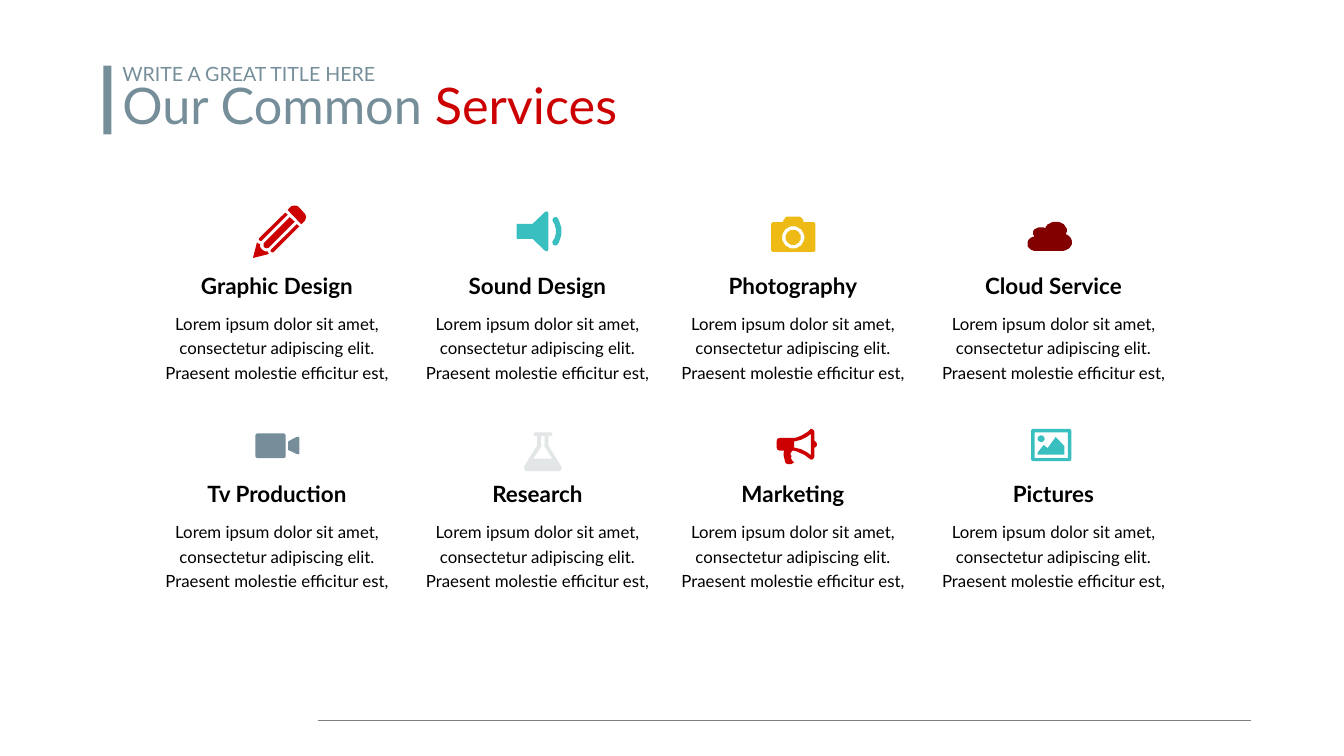
from lxml import etree
from pptx import Presentation
from pptx.dml.color import RGBColor
from pptx.enum.shapes import MSO_CONNECTOR as CONNECTOR, MSO_SHAPE as SHAPE
from pptx.enum.text import MSO_AUTO_SIZE as FIT, PP_ALIGN as ALIGN
from pptx.oxml.ns import qn
from pptx.util import Pt

BLACK = RGBColor(0x00, 0x00, 0x00)
GREY = RGBColor(0x80, 0x80, 0x80)
SLATE = RGBColor(0x75, 0x8E, 0x99)
RED = RGBColor(0xCC, 0x00, 0x00)
TEAL = RGBColor(0x3A, 0xBF, 0xC0)
YELLOW = RGBColor(0xEE, 0xBB, 0x16)
MAROON = RGBColor(0x82, 0x00, 0x00)
SILVER = RGBColor(0xE2, 0xE6, 0xE6)

FONT = "Lato"
ICON_UNIT = Pt(0.72)
CURVE_STEPS = 8


def rounded(x, y, w, h, r):
    """Outline of a rounded rectangle; a circle when r is half of w and h."""
    k = 0.45 * r
    right, bottom = x + w, y + h
    return [
        (x + r, y), (right - r, y),
        (right - k, y, right, y + k, right, y + r), (right, bottom - r),
        (right, bottom - k, right - k, bottom, right - r, bottom), (x + r, bottom),
        (x + k, bottom, x, bottom - k, x, bottom - r), (x, y + r),
        (x, y + k, x + k, y, x + r, y),
    ]


# Outlines: a pair is a corner, six numbers are a cubic curve.
PENCIL = [
    [(101, 33), (96, 38), (69, 10), (73, 5), (78, 0, 87, 0, 92, 5), (101, 15),
     (106, 20, 106, 28, 101, 33)],
    [(36, 88), (35, 89, 35, 92, 36, 93), (38, 94, 40, 94, 41, 93), (92, 42), (87, 38)],
    [(13, 65), (12, 66, 12, 69, 13, 70), (15, 71, 17, 71, 18, 70), (69, 19), (64, 15)],
    [(73, 24), (23, 74), (20, 77, 20, 81, 23, 84), (25, 86, 29, 86, 32, 84), (83, 33)],
    [(32, 97), (31, 96, 30, 94, 29, 92), (21, 92, 14, 87, 14, 79), (15, 77),
     (12, 77, 10, 76, 8, 74), (0, 105)],
]
SPEAKER = [
    [(55, 3), (57, 1, 59, 0, 61, 1), (62, 1, 63, 3, 63, 6), (63, 73),
     (63, 77, 62, 78, 61, 79), (59, 80, 57, 79, 55, 77), (32, 55), (3, 55),
     (1, 55, 0, 54, 0, 52), (0, 27), (0, 25, 1, 25, 3, 25), (32, 25)],
    [(74, 13), (76, 12, 78, 12, 79, 12), (80, 12, 81, 13, 82, 15),
     (87, 23, 89, 31, 89, 40), (89, 49, 87, 57, 82, 65), (81, 67, 79, 68, 77, 68),
     (73, 68, 70, 64, 72, 60), (76, 53, 78, 47, 78, 40), (78, 33, 76, 26, 72, 20),
     (71, 18, 71, 14, 74, 13)],
]
CAMERA = [
    [(83, 11), (87, 11, 88, 13, 88, 16), (88, 65), (88, 69, 86, 70, 83, 70), (6, 70),
     (2, 70, 0, 69, 0, 65), (0, 16), (0, 13, 2, 11, 6, 11), (23, 11), (26, 5),
     (28, 2, 30, 0, 34, 0), (55, 0), (58, 0, 61, 2, 63, 5), (65, 11)],
    rounded(22, 19, 44, 44, 22),
    rounded(29, 26, 30, 30, 15),
]
CLOUD = [
    [(76, 25), (83, 27, 88, 33, 88, 41), (88, 51, 78, 58, 66, 58), (18, 58),
     (8, 58, 0, 52, 0, 44), (0, 36, 6, 30, 14, 29), (12, 27, 11, 25, 11, 22),
     (11, 15, 18, 11, 26, 11), (29, 11, 32, 11, 35, 13), (38, 5, 46, 0, 56, 0),
     (68, 0, 78, 8, 78, 17), (78, 20, 77, 23, 76, 25)],
]
VIDEO = [
    rounded(0, 0, 60, 49, 5),
    [(82, 7), (72, 12), (65, 16), (65, 33), (72, 36), (82, 41),
     (85, 42, 87, 41, 87, 39), (87, 10), (87, 7, 85, 6, 82, 7)],
]
FLASK = [
    [(73, 66), (77, 70, 73, 77, 68, 77), (7, 77), (1, 77, -1, 70, 1, 66), (26, 26),
     (26, 7), (22, 7), (18, 7, 18, 0, 22, 0), (52, 0), (57, 0, 57, 7, 52, 7),
     (48, 7), (48, 26)],
    [(18, 52), (56, 52), (41, 28), (41, 7), (34, 7), (34, 28)],
]
MEGAPHONE = [
    [(80, 31), (80, 34, 78, 37, 75, 37), (75, 54), (75, 59, 72, 61, 68, 61),
     (58, 52, 46, 46, 33, 43), (27, 45, 27, 51, 30, 54), (28, 59, 30, 63, 35, 66),
     (32, 70, 27, 71, 22, 70), (16, 70, 13, 56, 15, 43), (7, 43),
     (3, 43, 0, 40, 0, 36), (0, 26), (0, 21, 3, 18, 7, 18), (29, 18),
     (43, 18, 58, 10, 68, 0), (72, 0, 75, 3, 75, 7), (75, 24),
     (78, 25, 80, 28, 80, 31)],
    [(68, 10), (58, 18, 46, 24, 35, 25), (35, 37), (46, 38, 58, 44, 68, 52)],
]
LANDSCAPE = [
    rounded(0, 0, 80, 64, 5),
    [(7, 7), (7, 58), (73, 58), (73, 7)],
    rounded(13, 13, 14, 13, 6.5),
    [(66, 51), (13, 51), (13, 47), (25, 32), (33, 38), (49, 16), (66, 34)],
]

# Name, icon outlines, icon colour, icon left and top
SERVICES = [
    ("Graphic Design", PENCIL, RED, 361.4, 293),
    ("Sound Design", SPEAKER, TEAL, 738, 301.7),
    ("Photography", CAMERA, YELLOW, 1101.6, 309.6),
    ("Cloud Service", CLOUD, MAROON, 1468.1, 316.8),
    ("Tv Production", VIDEO, SLATE, 365, 619.2),
    ("Research", FLASK, SILVER, 748.8, 617.8),
    ("Marketing", MEGAPHONE, RED, 1109.5, 612.7),
    ("Pictures", LANDSCAPE, TEAL, 1473.1, 612.7),
]
DESCRIPTION = ("Lorem ipsum dolor sit amet, consectetur adipiscing elit. "
               "Praesent molestie efficitur est,")
COLUMN_LEFTS = [211, 583.2, 948.2, 1320.5]
ROW_TOPS = [385.2, 682.6]
COLUMN_WIDTH = 369.4

NAME_FORMAT = {"size": Pt(32), "bold": True}
DESCRIPTION_FORMAT = {"size": Pt(24)}
TITLE_FORMAT = {"size": Pt(72)}
KICKER_FORMAT = {"size": Pt(28)}


def flatten(outline):
    """Turn corners and cubic curves into a plain list of points."""
    points = []
    for step in outline:
        if len(step) == 2:
            points.append(step)
            continue
        x0, y0 = points[-1]
        x1, y1, x2, y2, x3, y3 = step
        for i in range(1, CURVE_STEPS + 1):
            t = i / CURVE_STEPS
            a, b, c, d = (1 - t) ** 3, 3 * t * (1 - t) ** 2, 3 * t * t * (1 - t), t ** 3
            points.append((a * x0 + b * x1 + c * x2 + d * x3,
                           a * y0 + b * y1 + c * y2 + d * y3))
    return points


def paint(shape, colour):
    shape.shadow.inherit = False
    shape.fill.solid()
    shape.fill.fore_color.rgb = colour
    shape.line.fill.background()


def add_icon(slide, outlines, colour, left, top):
    first, *others = [flatten(outline) for outline in outlines]
    builder = slide.shapes.build_freeform(*first[0], scale=ICON_UNIT)
    builder.add_line_segments(first[1:], close=True)
    for points in others:
        builder.move_to(*points[0])
        builder.add_line_segments(points[1:], close=True)
    paint(builder.convert_to_shape(Pt(left), Pt(top)), colour)


def add_text(slide, box, runs, font_format, align=ALIGN.LEFT, spacing=1.0, fit=FIT.NONE):
    frame = slide.shapes.add_textbox(*map(Pt, box)).text_frame
    frame.word_wrap = True
    frame.auto_size = fit
    paragraph = frame.paragraphs[0]
    paragraph.alignment = align
    paragraph.line_spacing = spacing
    for words, colour in runs:
        run = paragraph.add_run()
        run.text = words
        run.font.color.rgb = colour
        for attribute, value in {"name": FONT, **font_format}.items():
            setattr(run.font, attribute, value)


presentation = Presentation()
presentation.slide_width, presentation.slide_height = Pt(1920.24), Pt(1080)
slide = presentation.slides.add_slide(presentation.slide_layouts[6])

footer_rule = slide.shapes.add_connector(
    CONNECTOR.STRAIGHT, Pt(455), Pt(1029.6), Pt(1787.8), Pt(1029.6))
footer_rule.line.color.rgb = GREY
footer_rule.line.width = Pt(1)
etree.SubElement(footer_rule.element.spPr, qn("a:effectLst"))

for index, (name, outlines, colour, icon_left, icon_top) in enumerate(SERVICES):
    row, column = divmod(index, len(COLUMN_LEFTS))
    left, top = COLUMN_LEFTS[column], ROW_TOPS[row]
    add_icon(slide, outlines, colour, icon_left, icon_top)
    add_text(slide, (left, top, COLUMN_WIDTH, 46), [(name, BLACK)], NAME_FORMAT,
             ALIGN.CENTER, fit=FIT.SHAPE_TO_FIT_TEXT)
    add_text(slide, (left, top + 54, COLUMN_WIDTH, 120), [(DESCRIPTION, BLACK)],
             DESCRIPTION_FORMAT, ALIGN.CENTER, spacing=1.2)

add_text(slide, (167.8, 118.8, 1104.5, 80), [("Our Common ", SLATE), ("Services", RED)],
         TITLE_FORMAT, spacing=0.8, fit=FIT.SHAPE_TO_FIT_TEXT)
add_text(slide, (167.8, 85, 689.8, 41), [("WRITE A GREAT TITLE HERE", SLATE)],
         KICKER_FORMAT, fit=FIT.SHAPE_TO_FIT_TEXT)
title_bar = slide.shapes.add_shape(SHAPE.RECTANGLE, Pt(147.6), Pt(93.6), Pt(11.5), Pt(98.6))
paint(title_bar, SLATE)

presentation.save("out.pptx")
